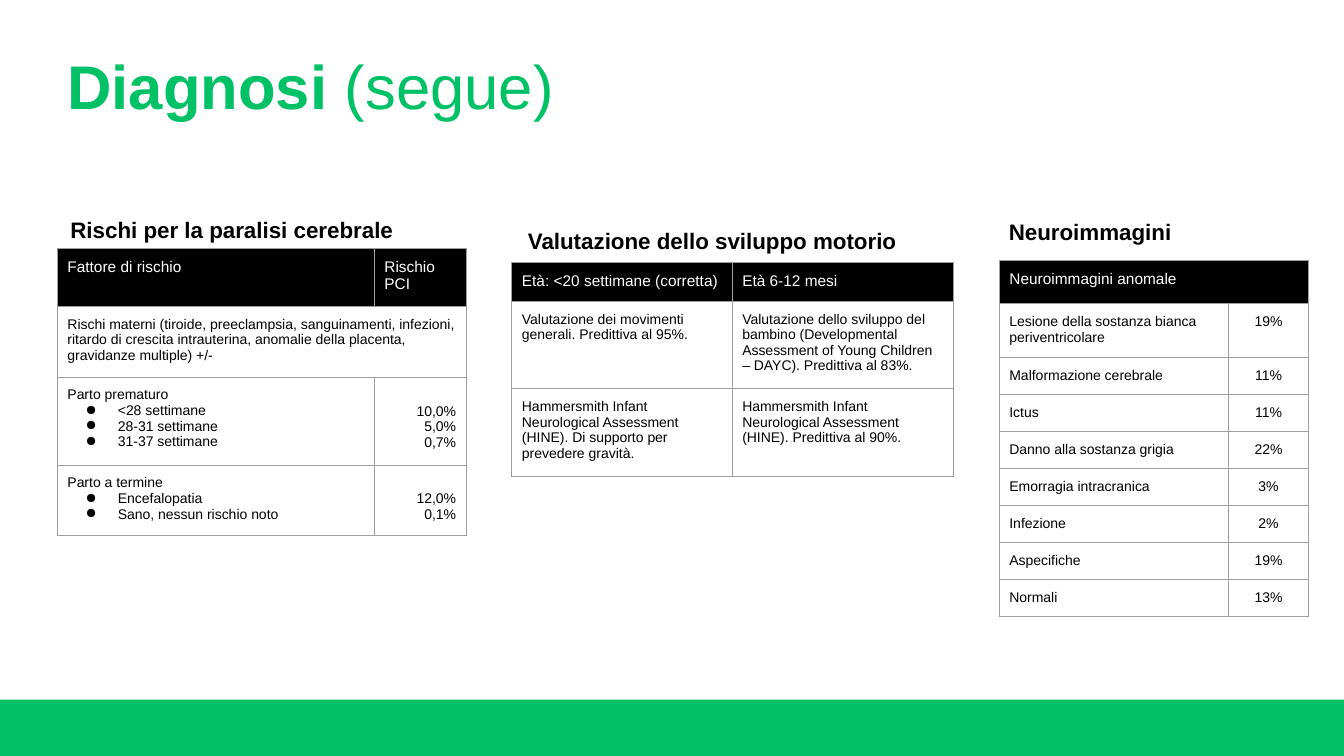
from dataclasses import dataclass, field

from lxml import etree
from pptx import Presentation
from pptx.dml.color import RGBColor
from pptx.enum.shapes import MSO_SHAPE
from pptx.enum.text import MSO_ANCHOR, MSO_AUTO_SIZE, PP_ALIGN
from pptx.oxml.ns import qn
from pptx.util import Pt

LEFT, CENTER, RIGHT = PP_ALIGN.LEFT, PP_ALIGN.CENTER, PP_ALIGN.RIGHT
TOP, MIDDLE = MSO_ANCHOR.TOP, MSO_ANCHOR.MIDDLE
NO_AUTOFIT = MSO_AUTO_SIZE.NONE
RECTANGLE = MSO_SHAPE.RECTANGLE

FONT = "Arial"
GREEN, BLACK, WHITE, GREY = "00C165", "000000", "FFFFFF", "9E9E9E"
SLIDE_WIDTH, SLIDE_HEIGHT = 960, 540
CELL_MARGIN = 7.2
BODY_LINE = 11.5
BULLET = "●"


@dataclass
class Cell:
    lines: list[str]
    align: PP_ALIGN = LEFT
    bulleted: bool = False  # every line after the first has a bullet
    lines_above: int = 0
    span: int = 1


@dataclass
class Panel:
    heading: str
    heading_at: tuple[float, float, float]  # left, top, width
    table_at: tuple[float, float]
    columns: list[float]
    heights: list[float]
    rows: list[list[Cell]] = field(default_factory=list)


def texts(*lines: str) -> list[Cell]:
    return [Cell([line]) for line in lines]


def risk_group(name: str, risks: dict[str, str]) -> list[Cell]:
    """A group of risk factors beside percentages that start one line lower."""
    return [Cell([name, *risks], bulleted=True),
            Cell(list(risks.values()), RIGHT, lines_above=1)]


FINDINGS = {
    "Lesione della sostanza bianca periventricolare": "19%",
    "Malformazione cerebrale": "11%",
    "Ictus": "11%",
    "Danno alla sostanza grigia": "22%",
    "Emorragia intracranica": "3%",
    "Infezione": "2%",
    "Aspecifiche": "19%",
    "Normali": "13%",
}

PANELS = [
    Panel("Rischi per la paralisi cerebrale", (43.2, 151.2, 287.3), (41, 177.6),
          [226.4, 65.6], [41.4, 50, 62.8, 50], [
        texts("Fattore di rischio", "Rischio PCI"),
        [Cell(["Rischi materni (tiroide, preeclampsia, sanguinamenti, infezioni, "
               "ritardo di crescita intrauterina, anomalie della placenta, "
               "gravidanze multiple) +/-"], span=2)],
        risk_group("Parto prematuro", {"<28 settimane": "10,0%",
                                       "28-31 settimane": "5,0%",
                                       "31-37 settimane": "0,7%"}),
        risk_group("Parto a termine", {"Encefalopatia": "12,0%",
                                       "Sano, nessun rischio noto": "0,1%"}),
    ]),
    Panel("Valutazione dello sviluppo motorio", (370, 158.4, 292.3), (365.6, 187.6),
          [157.4, 158], [27.6, 62.4, 62.6], [
        texts("Età: <20 settimane (corretta)", "Età 6-12 mesi"),
        texts("Valutazione dei movimenti generali. Predittiva al 95%.",
              "Valutazione dello sviluppo del bambino (Developmental Assessment "
              "of Young Children – DAYC). Predittiva al 83%."),
        texts("Hammersmith Infant Neurological Assessment (HINE). "
              "Di supporto per prevedere gravità.",
              "Hammersmith Infant Neurological Assessment (HINE). "
              "Predittiva al 90%."),
    ]),
    Panel("Neuroimmagini", (713.5, 152.6, 191.5), (713.8, 186),
          [163.8, 57], [31, 38] + [26.4] * (len(FINDINGS) - 1), [
        [Cell(["Neuroimmagini anomale"], span=2)],
        *([Cell([finding]), Cell([share], CENTER)]
          for finding, share in FINDINGS.items()),
    ]),
]


def rgb(hex_colour: str) -> RGBColor:
    return RGBColor.from_string(hex_colour)


def style(paragraph, size: float, colour: str, bold: bool | None = None) -> None:
    font = paragraph.font
    font.name, font.size, font.bold = FONT, Pt(size), bold
    font.color.rgb = rgb(colour)


def add_bullet(paragraph) -> None:
    properties = paragraph._p.get_or_add_pPr()
    properties.set("marL", str(Pt(36)))
    properties.set("indent", str(Pt(-23)))
    bullet_colour = etree.SubElement(properties, qn("a:buClr"))
    etree.SubElement(bullet_colour, qn("a:srgbClr"), val=BLACK)
    etree.SubElement(properties, qn("a:buChar"), char=BULLET)


def add_borders(cell) -> None:
    properties = cell._tc.get_or_add_tcPr()
    for position, side in enumerate(("a:lnL", "a:lnR", "a:lnT", "a:lnB")):
        border = etree.Element(qn(side), w=str(Pt(0.75)))
        fill = etree.SubElement(border, qn("a:solidFill"))
        etree.SubElement(fill, qn("a:srgbClr"), val=GREY)
        properties.insert(position, border)


def fill_cell(cell, content: Cell, is_header: bool) -> None:
    cell.margin_left = cell.margin_right = cell.margin_bottom = Pt(CELL_MARGIN)
    cell.margin_top = Pt(CELL_MARGIN + content.lines_above * BODY_LINE)
    cell.vertical_anchor = TOP
    frame = cell.text_frame
    frame.text = "\n".join(content.lines)
    for index, paragraph in enumerate(frame.paragraphs):
        paragraph.alignment = content.align
        if content.bulleted and index:
            add_bullet(paragraph)
        style(paragraph, 11 if is_header else 10, WHITE if is_header else BLACK)


def add_heading(slide, panel: Panel) -> None:
    left, top, width = panel.heading_at
    frame = slide.shapes.add_textbox(Pt(left), Pt(top), Pt(width), Pt(26.6)).text_frame
    frame.word_wrap = True
    frame.text = panel.heading
    style(frame.paragraphs[0], 16, BLACK, bold=True)


def add_panel_table(slide, panel: Panel) -> None:
    left, top = panel.table_at
    table = slide.shapes.add_table(
        len(panel.rows), len(panel.columns), Pt(left), Pt(top),
        Pt(sum(panel.columns)), Pt(sum(panel.heights))).table
    table.horz_banding = False
    for column, width in zip(table.columns, panel.columns):
        column.width = Pt(width)
    for row, height in zip(table.rows, panel.heights):
        row.height = Pt(height)
    for row_index, contents in enumerate(panel.rows):
        is_header = row_index == 0
        for cell in table.rows[row_index].cells:
            if is_header:
                cell.fill.solid()
                cell.fill.fore_color.rgb = rgb(BLACK)
            else:
                cell.fill.background()
            add_borders(cell)
        for column_index, content in enumerate(contents):
            cell = table.cell(row_index, column_index)
            if content.span > 1:
                cell.merge(table.cell(row_index, column_index + content.span - 1))
            fill_cell(cell, content, is_header)


def add_title(slide) -> None:
    title = slide.shapes.title
    title.left, title.top, title.width, title.height = Pt(41), Pt(36), Pt(394), Pt(56)
    frame = title.text_frame
    frame.auto_size, frame.vertical_anchor = NO_AUTOFIT, MIDDLE
    frame.word_wrap = True
    paragraph = frame.paragraphs[0]
    paragraph.alignment, paragraph.line_spacing = LEFT, 0.9
    style(paragraph, 44, GREEN)
    for text, bold in (("Diagnosi ", True), ("(segue)", False)):
        run = paragraph.add_run()
        run.text, run.font.bold = text, bold


def add_footer_band(slide) -> None:
    top = 499.7
    band = slide.shapes.add_shape(
        RECTANGLE, 0, Pt(top), Pt(SLIDE_WIDTH), Pt(SLIDE_HEIGHT - top))
    band.shadow.inherit = False
    band.fill.solid()
    band.fill.fore_color.rgb = rgb(GREEN)
    band.line.fill.background()


def main() -> None:
    deck = Presentation()
    deck.slide_width, deck.slide_height = Pt(SLIDE_WIDTH), Pt(SLIDE_HEIGHT)
    slide = deck.slides.add_slide(deck.slide_layouts.get_by_name("Title Only"))
    add_footer_band(slide)
    add_title(slide)
    for panel in PANELS:
        add_heading(slide, panel)
        add_panel_table(slide, panel)
    deck.save("out.pptx")


if __name__ == "__main__":
    main()
